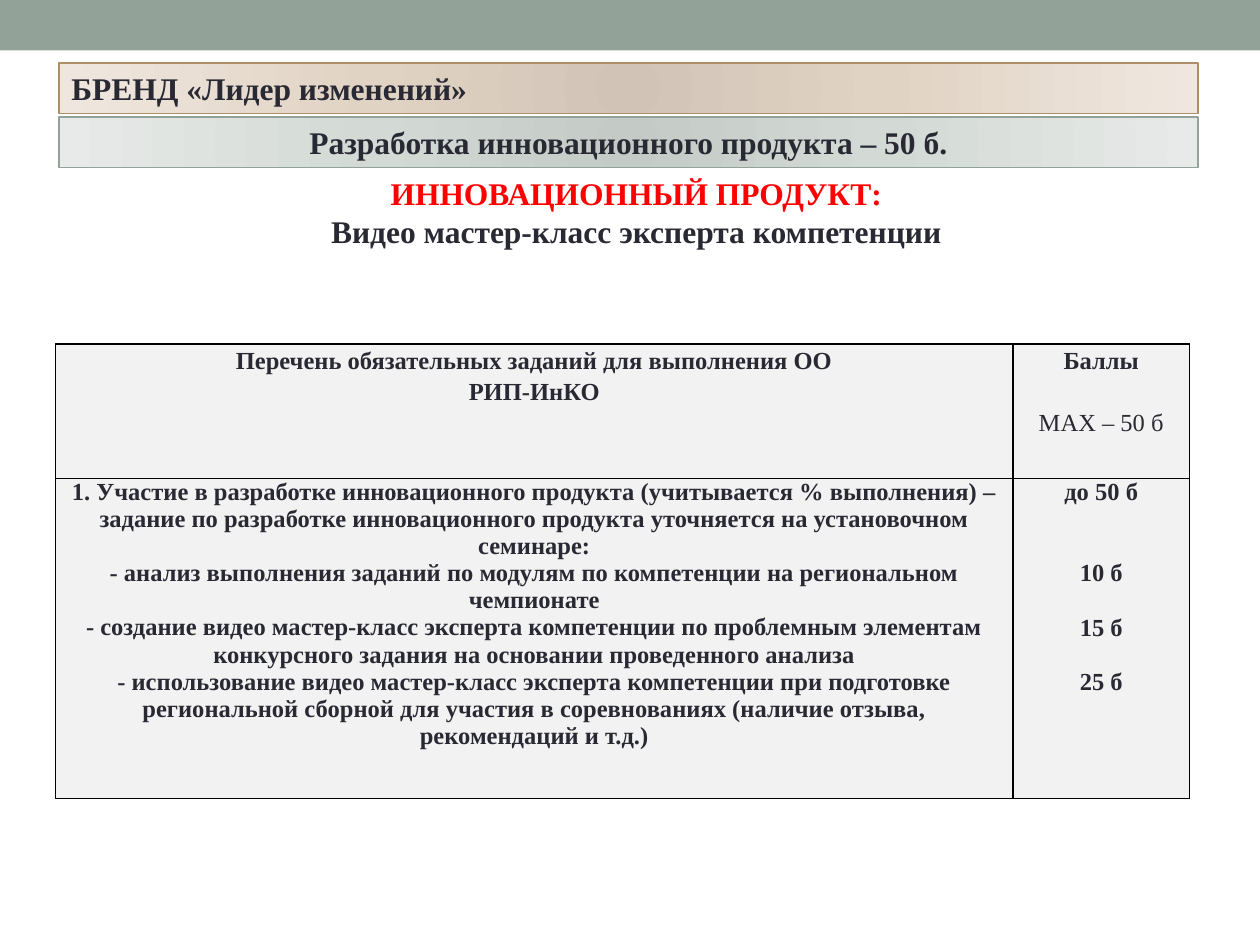
from dataclasses import dataclass

from lxml import etree
from pptx import Presentation
from pptx import util as u
from pptx.dml.color import RGBColor
from pptx.enum import shapes, text
from pptx.oxml import parse_xml
from pptx.oxml.ns import nsdecls, qn

COLORS = {"sage": "93A299", "tan": "AD8F67", "ink": "292934",
          "red": "FF0000", "cell": "F2F2F2", "border": "000000"}
FONT = "Times New Roman"
LEFT, WIDTH, BAR_HEIGHT = 1.19, 22.96, 1.02
LINE = 15.5  # height of one 14 pt line, in points
CENTER = text.PP_ALIGN.CENTER


@dataclass
class Para:
    text: str
    color: str = "ink"
    bold: bool = True
    before: float = 0


@dataclass
class Banner:
    text: str
    top: float
    stops: tuple[str, str, str]
    line: str
    align: text.PP_ALIGN


@dataclass
class Cell:
    paras: list[Para]
    spacing: float = 1.0


BANNERS = [
    Banner("БРЕНД «Лидер изменений»", 1.27, ("D1C4B6", "E1D3C4", "EFE7DF"),
           "tan", text.PP_ALIGN.LEFT),
    Banner("Разработка инновационного продукта – 50 б.", 2.36,
           ("C4CAC6", "D3DAD6", "E7EAE8"), "sage", CENTER),
]

TASKS = [
    "1. Участие в разработке инновационного продукта (учитывается % выполнения) – "
    "задание по разработке инновационного продукта уточняется на установочном семинаре:",
    "- анализ выполнения заданий по модулям по компетенции на региональном чемпионате",
    "- создание видео мастер-класс эксперта компетенции по проблемным элементам "
    "конкурсного задания на основании проведенного анализа",
    "- использование видео мастер-класс эксперта компетенции при подготовке "
    "региональной сборной для участия в соревнованиях (наличие отзыва, рекомендаций и т.д.)",
]

ROWS = [
    [Cell([Para("Перечень обязательных заданий для выполнения ОО"), Para("РИП-ИнКО")], 1.15),
     Cell([Para("Баллы"), Para("MAX – 50 б", bold=False, before=LINE * 1.15)], 1.15)],
    [Cell([Para(task) for task in TASKS]),
     Cell([Para("до 50 б"), Para("10 б", before=2 * LINE),
           Para("15 б", before=LINE), Para("25 б", before=LINE)])],
]
COL_WIDTHS = (19.3, 3.56)
ROW_HEIGHTS = (2.72, 6.45)


def rgb(name: str) -> RGBColor:
    return RGBColor.from_string(COLORS[name])


def write(tf, paras: list[Para], *, size: float = 18, align=CENTER, spacing: float = 1.0) -> None:
    tf.word_wrap = True
    for i, para in enumerate(paras):
        p = tf.add_paragraph() if i else tf.paragraphs[0]
        p.alignment = align
        p.line_spacing = spacing
        p.space_before = u.Pt(para.before)
        r = p.add_run()
        r.text = para.text
        r.font.name = FONT
        r.font.size = u.Pt(size)
        r.font.bold = para.bold
        r.font.color.rgb = rgb(para.color)


def add_rect(s, left: float, top: float, width: float, height: float):
    sp = s.shapes.add_shape(shapes.MSO_SHAPE.RECTANGLE,
                            u.Cm(left), u.Cm(top), u.Cm(width), u.Cm(height))
    sp.shadow.inherit = False
    return sp


def fill_radial(sp, stops: tuple[str, str, str]) -> None:
    """Give the shape a circular gradient, which the public API cannot set."""
    gs = "".join(f'<a:gs pos="{pos}"><a:srgbClr val="{color}"/></a:gs>'
                 for pos, color in zip((0, 45000, 100000), stops))
    grad = parse_xml(
        f'<a:gradFill {nsdecls("a")} rotWithShape="1"><a:gsLst>{gs}</a:gsLst>'
        '<a:path path="circle"><a:fillToRect l="100000" t="100000" r="100000" b="100000"/>'
        '</a:path></a:gradFill>')
    sp.element.spPr.find(qn("a:prstGeom")).addnext(grad)


def add_banner(s, banner: Banner) -> None:
    sp = add_rect(s, LEFT, banner.top, WIDTH, BAR_HEIGHT)
    fill_radial(sp, banner.stops)
    sp.line.color.rgb = rgb(banner.line)
    sp.line.width = u.Pt(0.75)
    write(sp.text_frame, [Para(banner.text)], align=banner.align)
    sp.text_frame.auto_size = text.MSO_AUTO_SIZE.SHAPE_TO_FIT_TEXT


def set_borders(cell) -> None:
    tc_pr = cell._tc.get_or_add_tcPr()
    for i, side in enumerate(("lnL", "lnR", "lnT", "lnB")):
        ln = etree.Element(qn(f"a:{side}"), w=str(u.Pt(1)))
        fill = etree.SubElement(ln, qn("a:solidFill"))
        etree.SubElement(fill, qn("a:srgbClr"), val=COLORS["border"])
        tc_pr.insert(i, ln)


def add_score_table(s) -> None:
    frame = s.shapes.add_table(len(ROWS), len(COL_WIDTHS), u.Cm(1.12), u.Cm(6.93),
                               u.Cm(sum(COL_WIDTHS)), u.Cm(sum(ROW_HEIGHTS)))
    table = frame.table
    for column, width in zip(table.columns, COL_WIDTHS):
        column.width = u.Cm(width)
    for row, height, contents in zip(table.rows, ROW_HEIGHTS, ROWS):
        row.height = u.Cm(height)
        for cell, content in zip(row.cells, contents):
            cell.margin_left = cell.margin_right = u.Cm(0.15)
            cell.margin_top = cell.margin_bottom = 0
            cell.fill.solid()
            cell.fill.fore_color.rgb = rgb("cell")
            set_borders(cell)
            write(cell.text_frame, content.paras, size=14, spacing=content.spacing)


def add_product_title(s) -> None:
    sp = s.shapes.add_textbox(u.Cm(1.35), u.Cm(3.38), u.Cm(WIDTH), u.Cm(1.8))
    write(sp.text_frame, [Para("ИННОВАЦИОННЫЙ ПРОДУКТ:", "red"),
                          Para("Видео мастер-класс эксперта компетенции")])
    sp.text_frame.auto_size = text.MSO_AUTO_SIZE.SHAPE_TO_FIT_TEXT


def main() -> None:
    prs = Presentation()
    prs.slide_width, prs.slide_height = u.Cm(25.4), u.Cm(19.05)
    s = prs.slides.add_slide(prs.slide_layouts[6])
    strip = add_rect(s, 0, 0, 25.4, BAR_HEIGHT)
    strip.fill.solid()
    strip.fill.fore_color.rgb = rgb("sage")
    strip.line.fill.background()
    for banner in BANNERS:
        add_banner(s, banner)
    add_score_table(s)
    add_product_title(s)
    prs.save("out.pptx")


if __name__ == "__main__":
    main()
